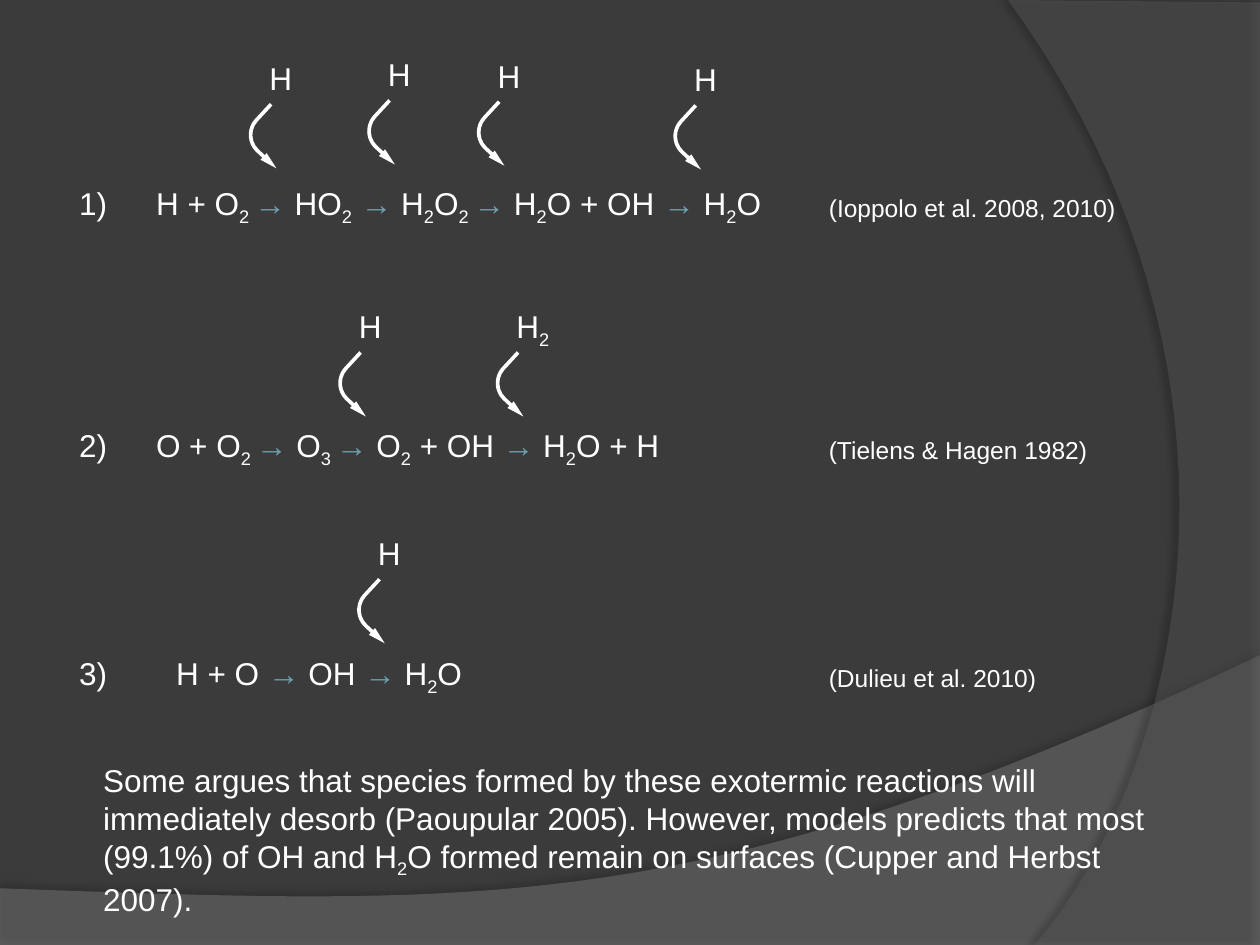
from lxml import etree
from pptx import Presentation
from pptx.dml.color import RGBColor
from pptx.enum.shapes import MSO_SHAPE
from pptx.enum.text import MSO_AUTO_SIZE
from pptx.oxml import parse_xml
from pptx.oxml.ns import nsdecls, qn
from pptx.util import Inches, Pt

WHITE = "FFFFFF"
ACCENT = "6EA0B0"
BACKGROUND = "3B3B3B"
FORMULA_LEFT = 1.14
CURVE_STEPS = 40

REACTIONS = [
    ("1)", 1.41, FORMULA_LEFT, 5.35,
     "H + O|_2 |→| HO|_2| |→| H|_2|O|_2 |→| H|_2|O + OH |→| H|_2|O",
     [("H", 2.04, 0.42), ("H", 2.98, 0.39), ("H", 3.85, 0.4), ("H", 5.41, 0.43)],
     "(Ioppolo et al. 2008, 2010)", 2.49),
    ("2)", 3.33, FORMULA_LEFT, 4.33,
     "O + O|_2 |→| O|_3 |→| O|_2| + OH |→| H|_2|O + H",
     [("H", 2.75, 2.39), ("H|_2", 4, 2.39)],
     "(Tielens & Hagen 1982)", 2.27),
    ("3)", 5.14, 1.3, 2.47,
     "H + O |→| OH |→| H|_2|O",
     [("H", 2.9, 4.19)],
     "(Dulieu et al. 2010)", 1.86),
]

CONCLUSION = (
    "Some argues that species formed by these exotermic reactions will "
    "immediately desorb (Paoupular 2005). However, models predicts that most "
    "(99.1%) of OH and H|_2|O formed remain on surfaces (Cupper and Herbst 2007)."
)


def color(value):
    return RGBColor.from_string(value)


def curve(start, control_one, control_two, end):
    points = []
    for step in range(1, CURVE_STEPS + 1):
        t = step / CURVE_STEPS
        weights = ((1 - t) ** 3, 3 * t * (1 - t) ** 2, 3 * t * t * (1 - t), t ** 3)
        corners = (start, control_one, control_two, end)
        points.append(tuple(
            sum(weight * corner[axis] for weight, corner in zip(weights, corners))
            for axis in (0, 1)
        ))
    return points


def add_backdrop(slide, points, fill, opacity, shadow_opacity, distance, direction):
    vertices = [(Inches(x), Inches(y)) for x, y in points]
    builder = slide.shapes.build_freeform(*vertices[0])
    builder.add_line_segments(vertices[1:], close=True)
    shape = builder.convert_to_shape()
    shape.line.fill.background()
    shape.fill.solid()
    shape.fill.fore_color.rgb = color(fill)
    fill_color = shape.fill._xPr.find(qn("a:solidFill"))[0]
    etree.SubElement(fill_color, qn("a:alpha"), val=str(opacity * 1000))
    shape._element.spPr.append(parse_xml(
        f'<a:effectLst {nsdecls("a")}><a:outerShdw blurRad="{Pt(4)}" '
        f'dist="{Pt(distance)}" dir="{direction * 60000}" algn="ctr" rotWithShape="0">'
        f'<a:srgbClr val="000000"><a:alpha val="{shadow_opacity * 1000}"/></a:srgbClr>'
        '</a:outerShdw></a:effectLst>'
    ))


def add_text(slide, text, left, top, width, height=0.4, size=18, wrap=False):
    box = slide.shapes.add_textbox(Inches(left), Inches(top), Inches(width), Inches(height))
    frame = box.text_frame
    frame.word_wrap = wrap
    frame.auto_size = MSO_AUTO_SIZE.SHAPE_TO_FIT_TEXT
    paragraph = frame.paragraphs[0]
    paragraph.font.name = "Arial"
    paragraph.font.size = Pt(size)
    paragraph.font.color.rgb = color(WHITE)
    for part in text.split("|"):
        run = paragraph.add_run()
        run.text = part.removeprefix("_")
        if part.startswith("_"):
            run._r.get_or_add_rPr().set("baseline", "-25000")
        elif part == "→":
            run.font.color.rgb = color(ACCENT)


def add_bent_arrow(slide, left, top):
    arrow = slide.shapes.add_shape(
        MSO_SHAPE.BENT_ARROW, Inches(left), Inches(top), Inches(0.39), Inches(0.38))
    arrow.rotation = 42.8
    arrow._element.spPr.get_or_add_xfrm().set("flipV", "1")
    for index, value in enumerate((0.076, 0.095, 0.363, 0.491)):
        arrow.adjustments[index] = value
    arrow.shadow.inherit = False
    arrow.fill.solid()
    arrow.fill.fore_color.rgb = color(WHITE)
    arrow.line.fill.background()


def add_reaction(slide, number, top, left, width, formula, reactants, reference, reference_width):
    add_text(slide, formula, left, top, width)
    for label, label_left, label_top in reactants:
        add_bent_arrow(slide, label_left - 0.08, label_top + 0.48)
        add_text(slide, label, label_left, label_top, 0.48 if "_" in label else 0.38)
    add_text(slide, number, 0.53, top, 0.43)
    add_text(slide, reference, 6.48, top + 0.07, reference_width, 0.34, size=14)


def main():
    presentation = Presentation()
    presentation.slide_width = Inches(10)
    presentation.slide_height = Inches(7.5)
    slide = presentation.slides.add_slide(presentation.slide_layouts[6])
    slide.background.fill.solid()
    slide.background.fill.fore_color.rgb = color(BACKGROUND)

    lower_wave = [(0, 7.05), (0, 7.51), (10, 7.51), (10, 5.2)]
    lower_wave += curve((10, 5.2), (5.59, 7.29), (3.91, 7.19), (0, 7.05))
    add_backdrop(slide, lower_wave, "7F7F7F", 45, 35, 3.5, 270)
    right_arc = [(10, 0.02), (10, 7.5), (8.21, 7.5)]
    right_arc += curve((8.21, 7.5), (9.35, 6.19), (10.18, 3), (8, 0))
    add_backdrop(slide, right_arc, "5E5E5E", 40, 45, 4, 180)

    for reaction in REACTIONS:
        add_reaction(slide, *reaction)
    add_text(slide, CONCLUSION, 0.72, 5.99, 8.65, 1.31, wrap=True)
    presentation.save("out.pptx")


if __name__ == "__main__":
    main()
